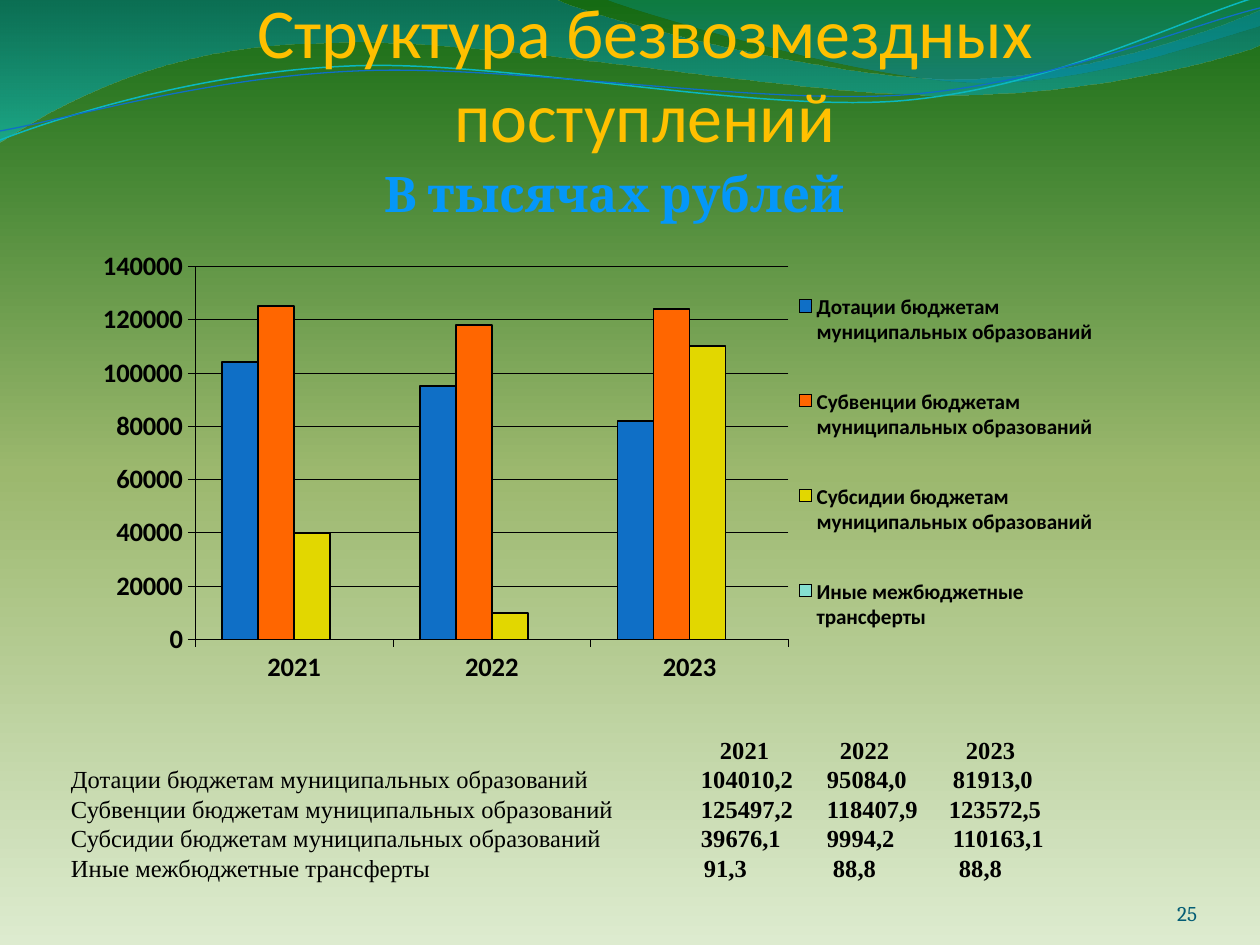
from lxml.etree import SubElement as Sub
from pptx import Presentation
from pptx.chart.data import CategoryChartData as ChartData
from pptx.dml.color import RGBColor as RGB
from pptx.enum.chart import XL_CHART_TYPE as Kind, XL_LEGEND_POSITION as Side
from pptx.enum.chart import XL_TICK_LABEL_POSITION as Label, XL_TICK_MARK as Tick
from pptx.enum.text import MSO_ANCHOR as Anchor, PP_ALIGN as Align
from pptx.oxml.ns import qn
from pptx.oxml.xmlchemy import OxmlElement as Node
from pptx.util import Emu, Pt

SCALE = 914400 / 126

BLACK = RGB(0, 0, 0)
GOLD = RGB(0xFF, 0xC0, 0x00)
SKY = RGB(0x04, 0x97, 0xF9)
NAVY = RGB(0x04, 0x5D, 0x75)
BLUE = RGB(0x0F, 0x6F, 0xC6)
CYAN = RGB(0x0A, 0xB8, 0xBF)
ORANGE = RGB(0xFF, 0x66, 0x00)
YELLOW = RGB(0xE2, 0xD7, 0x00)
MINT = RGB(0x85, 0xDF, 0xD0)
PALE = RGB(0xDD, 0xEB, 0xCF)
OLIVE = RGB(0x9C, 0xB8, 0x6E)
GREEN = RGB(0x15, 0x6B, 0x13)
TEAL = RGB(0x00, 0x74, 0xA1)
AQUA = RGB(0x00, 0xC6, 0xCF)
SEA = RGB(0x00, 0xA1, 0xA9)
OCEAN = RGB(0x00, 0x8B, 0xBF)

YEARS = ("2021", "2022", "2023")
HEAD_TABS = (649, 769, 895)
GRANTS = (
    ("Дотации бюджетам муниципальных образований", BLUE,
     (104010.2, 95084.0, 81913.0), (630, 756, 882)),
    ("Субвенции бюджетам муниципальных образований", ORANGE,
     (125497.2, 118407.9, 123572.5), (630, 756, 878)),
    ("Субсидии бюджетам муниципальных образований", YELLOW,
     (39676.1, 9994.2, 110163.1), (630, 756, 882)),
    ("Иные межбюджетные трансферты", MINT,
     (91.3, 88.8, 88.8), (633, 762, 888)),
)

BANDS = (
    ((0, -1), ((554, -1), (600, 21, 837, 79, 955, 79), (1075, 79, 1207, 33, 1260, 11),
               (1261, 45), (1239, 55, 1096, 96, 940, 95), (784, 95, 481, 35, 324, 43),
               (163, 44, 58, 105, -1, 142)),
     ((0, TEAL, 45), (100, AQUA, 55))),
    ((604, -1), ((640, 14, 859, 78, 969, 82), (1079, 87, 1211, 40, 1260, 26), (1260, 0)),
     ((0, SEA, 30), (80, OCEAN, 45))),
)
CURVES = (
    ((0, 140), ((60, 117, 199, 72, 349, 66), (498, 59, 747, 112, 898, 101),
                (1049, 89, 1182, 19, 1257, -3)), CYAN, 0.85),
    ((0, 131), ((59, 121, 207, 77, 357, 71), (508, 64, 752, 105, 903, 95),
                (1053, 84, 1186, 26, 1260, 8)), BLUE, 0.75),
)


def px(n):
    return Emu(round(n * SCALE))


def blend(fill, root, stops, angle):
    fill.gradient()
    fill.gradient_angle = angle
    group = next(root.iter(qn("a:gsLst")))
    for old in list(group):
        group.remove(old)
    for place, color, alpha in stops:
        stop = Sub(group, qn("a:gs"), pos=str(place * 1000))
        tint = Sub(stop, qn("a:srgbClr"), val=str(color))
        if alpha < 100:
            Sub(tint, qn("a:alpha"), val=str(alpha * 1000))


def add_wave(slide, start, steps, close):
    spots = [step[i:i + 2] for step in steps for i in range(0, len(step), 2)]
    pen = slide.shapes.build_freeform(*start, scale=SCALE)
    pen.add_line_segments(spots, close=close)
    wave = pen.convert_to_shape()
    wave.shadow.inherit = False
    legs = iter(list(wave._element.iter(qn("a:lnTo"))))
    for step in steps:
        leg = next(legs)
        if len(step) == 6:
            bend = Node("a:cubicBezTo")
            leg.addprevious(bend)
            for part in (leg, next(legs), next(legs)):
                bend.append(part[0])
                part.getparent().remove(part)
    return wave


def add_band(slide, start, steps, stops):
    band = add_wave(slide, start, steps, True)
    band.line.fill.background()
    blend(band.fill, band._element, stops, 270)


def add_curve(slide, start, steps, color, width):
    curve = add_wave(slide, start, steps, False)
    curve.fill.background()
    curve.line.color.rgb = color
    curve.line.width = Pt(width)


def style(font, size, color, name, bold=False):
    font.size = Pt(size)
    font.color.rgb = color
    font.name = name
    font.bold = bold


def add_box(slide, box, inset, anchor):
    frame = slide.shapes.add_textbox(*map(px, box)).text_frame
    frame.word_wrap = True
    frame.vertical_anchor = anchor
    (frame.margin_left, frame.margin_top,
     frame.margin_right, frame.margin_bottom) = map(px, inset)
    return frame


def add_text(slide, box, text, size, color, name, align=Align.CENTER,
             bold=False, inset=(0, 0, 0, 0), anchor=Anchor.BOTTOM):
    para = add_box(slide, box, inset, anchor).paragraphs[0]
    para.text = text
    para.alignment = align
    style(para.font, size, color, name, bold)


def place(node, index, box):
    for old in node.findall(qn("c:layout")):
        node.remove(old)
    layout = Node("c:layout")
    manual = Sub(layout, qn("c:manualLayout"))
    if node.tag == qn("c:plotArea"):
        Sub(manual, qn("c:layoutTarget"), val="inner")
    for key in ("xMode", "yMode"):
        Sub(manual, qn("c:" + key), val="edge")
    for key, part in zip("xywh", box):
        Sub(manual, qn("c:" + key), val=str(part))
    node.insert(index, layout)


def rule(line):
    line.color.rgb = BLACK
    line.width = Pt(0.25)


def add_columns(slide, box):
    data = ChartData()
    data.categories = YEARS
    for name, _, vals, _ in GRANTS:
        data.add_series(name, [int(round(val, -3)) for val in vals])
    chart = slide.shapes.add_chart(Kind.COLUMN_CLUSTERED, *map(px, box), data).chart
    chart.has_title = False
    style(chart.font, 15.2, BLACK, "Calibri", True)
    plot = chart.plots[0]
    plot.gap_width = 150
    plot.overlap = 0
    plot.vary_by_categories = False
    for series, (_, color, _, _) in zip(plot.series, GRANTS):
        series.format.fill.solid()
        series.format.fill.fore_color.rgb = color
        series.format.line.color.rgb = BLACK
        series.format.line.width = Pt(1)
    for axis in (chart.category_axis, chart.value_axis):
        axis.major_tick_mark = Tick.OUTSIDE
        axis.minor_tick_mark = Tick.NONE
        rule(axis.format.line)
        style(axis.tick_labels.font, 15.2, BLACK, "Calibri", True)
    chart.category_axis.tick_label_position = Label.LOW
    scale = chart.value_axis
    scale.minimum_scale, scale.maximum_scale, scale.major_unit = 0, 140000, 20000
    rule(scale.major_gridlines.format.line)
    chart.has_legend = True
    legend = chart.legend
    legend.position = Side.RIGHT
    legend.include_in_layout = False
    style(legend.font, 12.1, BLACK, "Calibri", True)
    place(next(chart._chartSpace.iter(qn("c:plotArea"))), 0, (0.105, 0.064, 0.581, 0.791))
    place(legend._element, 1, (0.68, 0.03, 0.32, 0.9))


def add_row(para, name, vals, tabs):
    para.alignment = Align.LEFT
    style(para.font, 14, BLACK, "Times New Roman")
    stops = Node("a:tabLst")
    for tab in tabs:
        Sub(stops, qn("a:tab"), pos=str(px(tab)), algn="l")
    para._p.get_or_add_pPr().insert(0, stops)
    if name:
        para.add_run().text = name
    run = para.add_run()
    run.text = "".join("\t" + val for val in vals)
    run.font.bold = True


def add_sums(slide, box):
    frame = add_box(slide, box, (12, 6, 12, 6), Anchor.TOP)
    add_row(frame.paragraphs[0], "", YEARS, HEAD_TABS)
    for name, _, vals, tabs in GRANTS:
        sums = [f"{val:.1f}".replace(".", ",") for val in vals]
        add_row(frame.add_paragraph(), name, sums, tabs)


def main():
    deck = Presentation()
    deck.slide_width, deck.slide_height = px(1260), px(945)
    slide = deck.slides.add_slide(deck.slide_layouts[6])
    blend(slide.background.fill, slide._element,
          ((0, PALE, 100), (50, OLIVE, 100), (100, GREEN, 100)), 90)
    for band in BANDS:
        add_band(slide, *band)
    for curve in CURVES:
        add_curve(slide, *curve)
    add_text(slide, (78, 0, 1134, 156), "Структура безвозмездных поступлений",
             40, GOLD, "Calibri", inset=(0, 6, 0, 0))
    add_text(slide, (355, 157, 519, 72), "В тысячах рублей", 28, SKY, "Cambria",
             bold=True, inset=(13, 6, 13, 6), anchor=Anchor.TOP)
    add_text(slide, (1092, 876, 105, 50), "25", 12, NAVY, "Cambria", Align.RIGHT)
    add_columns(slide, (88, 236, 1021, 472))
    add_sums(slide, (59, 729, 1142, 161))
    deck.save("out.pptx")


if __name__ == "__main__":
    main()
